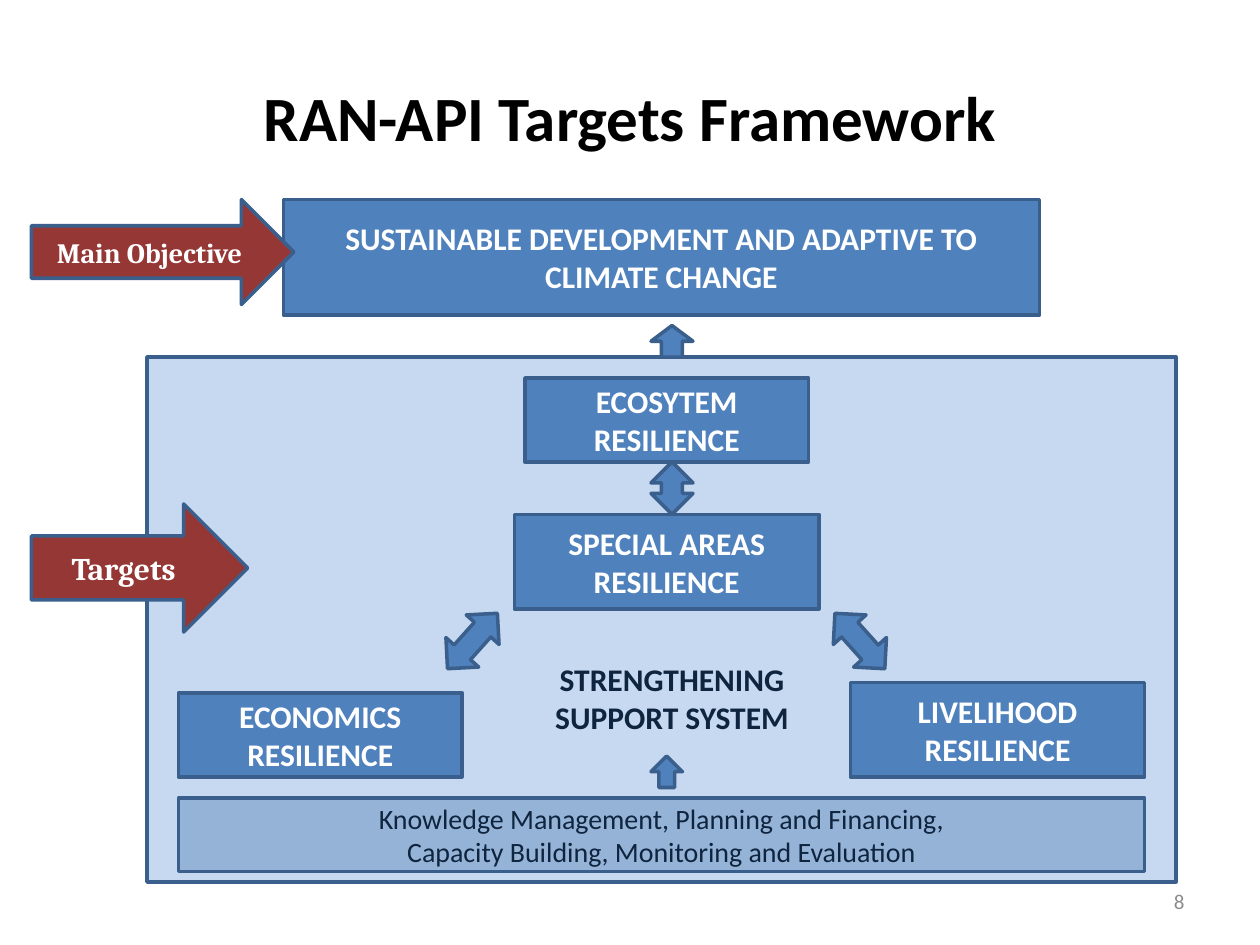
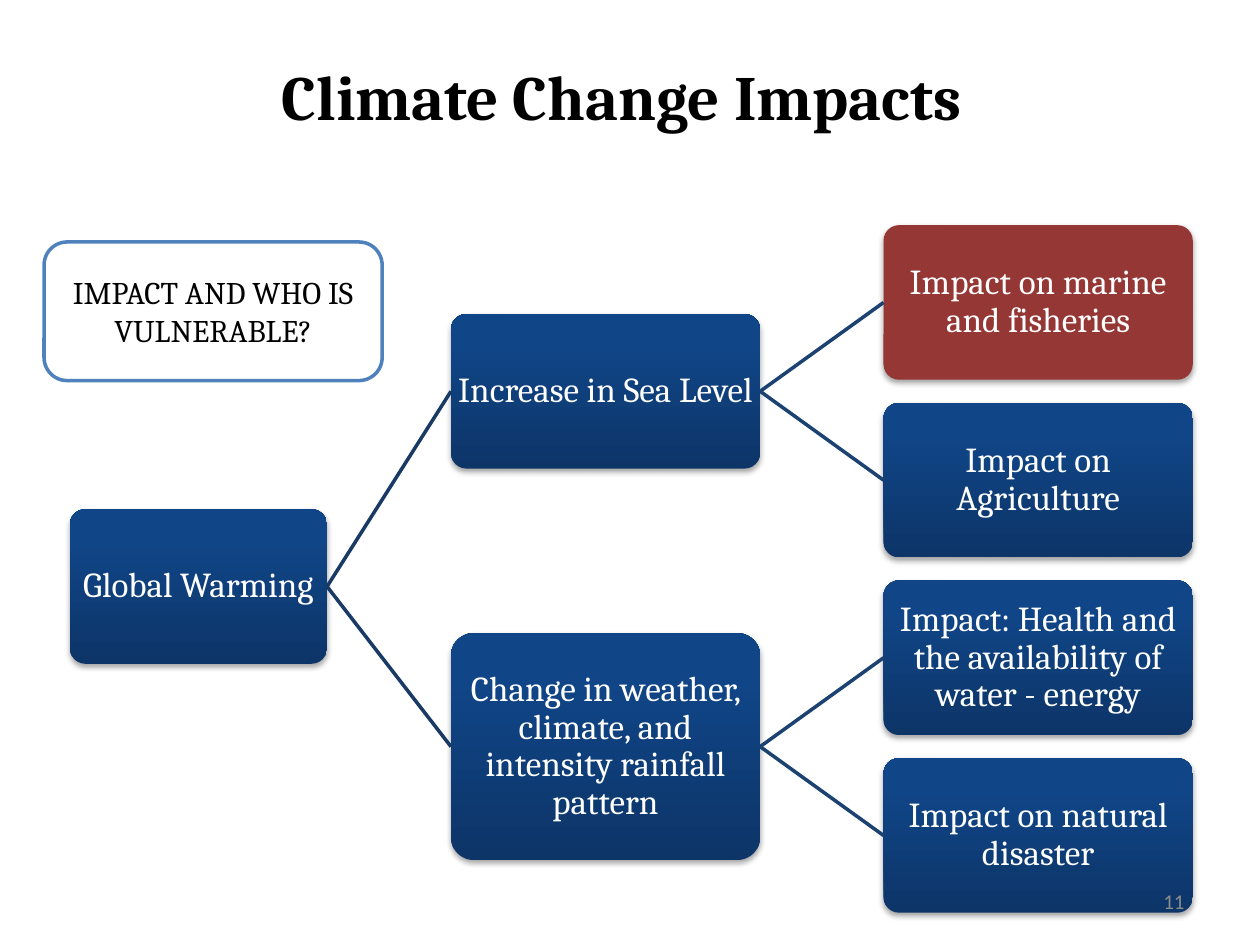
from copy import deepcopy

from lxml import etree
from pptx import Presentation
from pptx.dml.color import RGBColor
from pptx.enum.shapes import MSO_CONNECTOR, MSO_SHAPE
from pptx.enum.text import MSO_ANCHOR, PP_ALIGN
from pptx.oxml.ns import qn
from pptx.util import Inches, Pt

RECT, ROUND = MSO_SHAPE.RECTANGLE, MSO_SHAPE.ROUNDED_RECTANGLE
UP, BOTH, RIGHT = (MSO_SHAPE.UP_ARROW, MSO_SHAPE.UP_DOWN_ARROW,
                   MSO_SHAPE.RIGHT_ARROW)
STRAIGHT = MSO_CONNECTOR.STRAIGHT
MID = MSO_ANCHOR.MIDDLE
CENTER, END = PP_ALIGN.CENTER, PP_ALIGN.RIGHT

# Grid of 120 columns and 90 rows, so a cell is 1/12 inch
COLS, ROWS = 120, 90
CELL = Inches(10) / COLS

SANS, SERIF = "Calibri", "Cambria"
WHITE, BLACK, GREY, INK = "FFFFFF", "000000", "8C8C8C", "0F243E"
BLUE, EDGE, PALE, SOFT, RED = "4F81BD", "3A5F8C", "C6D9F1", "95B3D7", "953735"
NAVY = [(0, "0D3568"), (0.8, "104587"), (1, "0E458A")]
STEM, TWIG = "193A64", "1C4271"


def color(code):
    return RGBColor.from_string(code)


def cells(*counts):
    return [round(n * CELL) for n in counts]


def write(shape, text, size=18, font=SANS, ink=WHITE, bold=False,
          align=CENTER, pad=None, space=None):
    frame = shape.text_frame
    frame.word_wrap = True
    frame.vertical_anchor = MID
    if pad is not None:
        frame.margin_left = frame.margin_right = Inches(pad)
        frame.margin_top = frame.margin_bottom = Inches(pad)
    frame.text = text
    for para in frame.paragraphs:
        para.alignment = align
        para.line_spacing = space
        face = para.font
        face.size, face.name, face.bold = Pt(size), font, bold
        face.color.rgb = color(ink)


def label(slide, area, text, **style):
    write(slide.shapes.add_textbox(*cells(*area)), text, **style)


def block(slide, kind, area, fill=BLUE, edge=EDGE, turn=0, text=None, **style):
    shape = slide.shapes.add_shape(kind, *cells(*area))
    shape.shadow.inherit = False
    shape.rotation = turn
    if isinstance(fill, list):
        blend(shape, fill)
    else:
        shape.fill.solid()
        shape.fill.fore_color.rgb = color(fill)
    if edge:
        shape.line.color.rgb = color(edge)
        shape.line.width = Pt(2)
    else:
        shape.line.fill.background()
    if text:
        write(shape, text, **style)
    return shape


def blend(shape, stops):
    """Fill with three colour stops, running upwards."""
    shape.fill.gradient()
    shape.fill.gradient_angle = 90
    first = next(shape._element.spPr.iter(qn("a:gs")))
    first.addnext(deepcopy(first))
    for stop, (place, code) in zip(shape.fill.gradient_stops, stops):
        stop.position = place
        stop.color.rgb = color(code)


def shade(shape):
    """Add a soft shadow below."""
    effects = shape._element.spPr.find(qn("a:effectLst"))
    outer = etree.SubElement(effects, qn("a:outerShdw"), blurRad="40000",
                             dist="23000", dir="5400000", rotWithShape="0")
    tint = etree.SubElement(outer, qn("a:srgbClr"), val=BLACK)
    etree.SubElement(tint, qn("a:alpha"), val="35000")


def node(slide, area, text, fill=NAVY):
    shape = block(slide, ROUND, area, fill, None, text=text, size=20,
                  font=SERIF, pad=0.01, space=0.9)
    shape.adjustments[0] = 0.1
    shade(shape)
    return shape


def link(slide, start, end, ink):
    """Join the right side of one node to the left side of another."""
    line = slide.shapes.add_connector(STRAIGHT, 0, 0, 0, 0)
    line.begin_connect(start, 3)
    line.end_connect(end, 1)
    line.line.color.rgb = color(ink)
    line.line.width = Pt(2)
    etree.SubElement(line._element.spPr, qn("a:effectLst"))


def title(slide, area, text, font):
    label(slide, area, text, size=36, font=font, ink=BLACK, bold=True)


def number(slide, text):
    label(slide, (86, 83.4, 28, 4.8), text, size=12, ink=GREY, align=END)


def targets(slide):
    title(slide, (6, 3.6, 108, 15), "RAN-API Targets Framework", SANS)
    number(slide, "8")
    block(slide, RECT, (14, 34, 98, 50), PALE)

    # Goal and resilience boxes
    boxes = [
        ((27, 19, 72, 11),
         "SUSTAINABLE DEVELOPMENT AND ADAPTIVE TO CLIMATE CHANGE"),
        ((17, 66, 27, 8), "ECONOMICS RESILIENCE"),
        ((81, 65, 28, 9), "LIVELIHOOD RESILIENCE"),
        ((50, 36, 27, 8), "ECOSYTEM RESILIENCE"),
        ((49, 49, 29, 9), "SPECIAL AREAS RESILIENCE"),
    ]
    for area, text in boxes:
        block(slide, RECT, area, text=text, bold=True)

    # Support system
    label(slide, (50, 60, 28, 13), "STRENGTHENING SUPPORT SYSTEM",
          ink=INK, bold=True)
    block(slide, RECT, (17, 76, 92, 7), SOFT, size=16, ink=INK,
          text="Knowledge Management, Planning and Financing,\n"
               "Capacity Building, Monitoring and Evaluation")

    # Arrows between the boxes
    arrows = [
        (BOTH, (62, 44, 4, 5), 0),
        (BOTH, (79.8, 57.5, 4.2, 7.1), 318),
        (BOTH, (42.9, 57.5, 4.2, 7.1), 42),
        (UP, (62, 31, 4, 3), 0),
        (UP, (62, 72, 3, 3), 0),
    ]
    for kind, area, turn in arrows:
        block(slide, kind, area, turn=turn)

    # Red pointers at the left
    for area, text, size in [((3, 19, 25, 10), "Main Objective", 16),
                             ((3, 48, 20.6, 12.2), "Targets", 18)]:
        block(slide, RIGHT, area, RED, text=text, size=size, font=SERIF,
              bold=True)


def impacts(slide):
    title(slide, (5.2, 3.5, 108, 11.2), "Climate Change Impacts", SERIF)

    # Tree: root, two causes, two impacts for each cause
    wide, high, top, step = 29.45, 14.72, 21.45, 16.92
    tree = [
        ("Increase in Sea Level", high,
         [("Impact on marine and fisheries", RED),
          ("Impact on Agriculture", NAVY)]),
        ("Change in weather, climate, and intensity rainfall pattern", 21.6,
         [("Impact: Health and the availability of water - energy", NAVY),
          ("Impact on natural disaster", NAVY)]),
    ]
    root = node(slide, (6.65, 48.5, 24.5, high), "Global Warming")
    for i, (cause, tall, leaves) in enumerate(tree):
        first = top + 2 * i * step
        middle = first + (step + high) / 2
        branch = node(slide, (42.95, middle - tall / 2, wide, tall), cause)
        link(slide, root, branch, STEM)
        for j, (text, fill) in enumerate(leaves):
            leaf = node(slide, (84.15, first + j * step, wide, high),
                        text, fill)
            link(slide, branch, leaf, TWIG)

    number(slide, "11")
    block(slide, ROUND, (4.2, 23.05, 32.2, 13.2), WHITE, BLUE,
          text="IMPACT AND WHO IS VULNERABLE?", font=SERIF, ink=BLACK)


def main():
    deck = Presentation()
    deck.slide_width, deck.slide_height = cells(COLS, ROWS)
    for draw in (targets, impacts):
        draw(deck.slides.add_slide(deck.slide_layouts[6]))
    deck.save("out.pptx")


if __name__ == "__main__":
    main()
